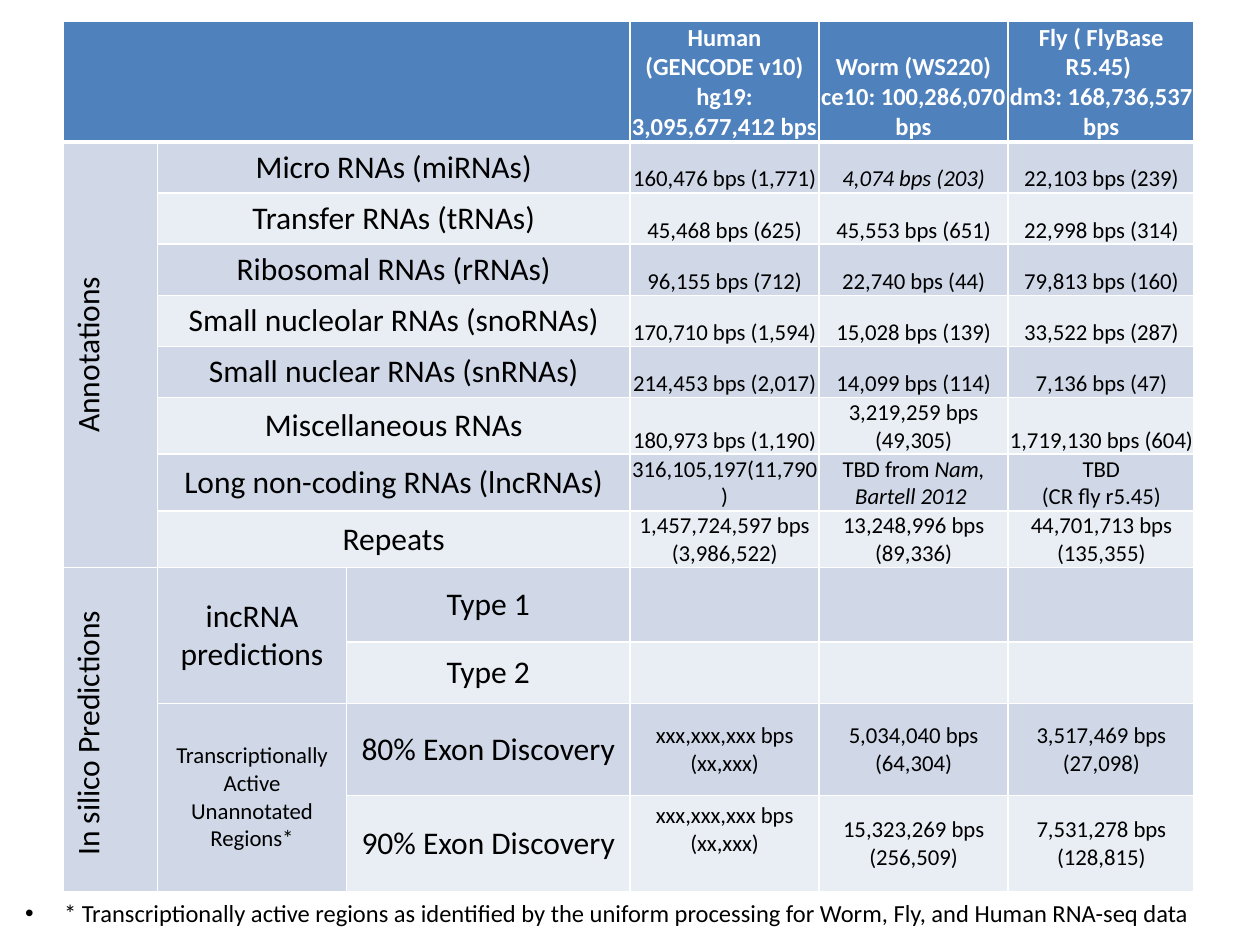
from pptx import Presentation
from pptx.dml.color import RGBColor
from pptx.enum.text import MSO_ANCHOR, PP_ALIGN
from pptx.oxml.ns import qn
from pptx.util import Inches, Pt
from lxml import etree

MIDDLE, BOTTOM = MSO_ANCHOR.MIDDLE, MSO_ANCHOR.BOTTOM
CENTER = PP_ALIGN.CENTER
FONT = "Calibri"
BLUE, DARK, LIGHT = "4F81BD", "D0D8E8", "E9EDF4"
WHITE, BLACK = "FFFFFF", "000000"

COLS = [0.75, 1.5, 2.25, 1.5, 1.5, 1.48]
ROWS = [0.95] + [0.4] * 5 + [0.45] * 3 + [0.59, 0.49, 0.73, 0.75]

HEADS = [
    "Human (GENCODE v10)\nhg19: 3,095,677,412 bps",
    "Worm (WS220)\nce10: 100,286,070 bps",
    "Fly ( FlyBase R5.45) \ndm3: 168,736,537 bps",
]
# Underscores set off italic text
NOTED = [
    ("Micro RNAs (miRNAs)", "160,476 bps (1,771)", "_4,074 bps (203)_", "22,103 bps (239)"),
    ("Transfer RNAs (tRNAs)", "45,468 bps (625)", "45,553 bps (651)", "22,998 bps (314)"),
    ("Ribosomal RNAs (rRNAs)", "96,155 bps (712)", "22,740 bps (44)", "79,813 bps (160)"),
    ("Small nucleolar RNAs (snoRNAs)", "170,710 bps (1,594)", "15,028 bps (139)", "33,522 bps (287)"),
    ("Small nuclear RNAs (snRNAs)", "214,453 bps (2,017)", "14,099 bps (114)", "7,136 bps (47)"),
    ("Miscellaneous RNAs", "180,973 bps (1,190)", "3,219,259 bps (49,305)", "1,719,130 bps (604)"),
    ("Long non-coding RNAs (lncRNAs)", "316,105,197(11,790)",
     "TBD from _Nam, Bartell 2012 _", "TBD\n(CR fly r5.45)"),
    ("Repeats", "1,457,724,597 bps (3,986,522)", "13,248,996 bps (89,336)", "44,701,713 bps (135,355)"),
]
GUESSED = [
    ("Type 1", "", "", ""),
    ("Type 2", "", "", ""),
    ("80% Exon Discovery", "xxx,xxx,xxx bps (xx,xxx)", "5,034,040 bps (64,304)", "3,517,469 bps (27,098)"),
    ("90% Exon Discovery", "xxx,xxx,xxx bps (xx,xxx)", "15,323,269 bps (256,509)", "7,531,278 bps (128,815)"),
]
NOTE = ("* Transcriptionally active regions as identified by the uniform "
        "processing for Worm, Fly, and Human RNA-seq data")


def color(code):
    return RGBColor.from_string(code)


def style(font, size, code=BLACK, bold=False):
    font.name, font.size, font.bold = FONT, Pt(size), bold
    font.color.rgb = color(code)


def write(cell, text, size, code=BLACK, bold=False):
    frame = cell.text_frame
    frame.text = text.replace("_", "")
    for para, line in zip(frame.paragraphs, text.split("\n")):
        para.alignment = CENTER
        if "_" in line:
            para.text = ""
            for i, part in enumerate(line.split("_")):
                if part:
                    run = para.add_run()
                    run.text = part
                    run.font.italic = i % 2 == 1
        for run in para.runs:
            style(run.font, size, code, bold)
    cell.vertical_anchor = MIDDLE


def tighten(cell):
    """Seat the text at the foot of the cell with thin margins."""
    cell.vertical_anchor = BOTTOM
    cell.margin_left = cell.margin_right = cell.margin_top = Inches(0.01)
    cell.margin_bottom = 0


def border(cell, row, col):
    props = cell._tc.get_or_add_tcPr()
    widths = {"a:lnL": 1, "a:lnR": 2.25 if col == len(COLS) - 1 else 1,
              "a:lnT": 1, "a:lnB": 3 if row == 0 else 1}
    for i, (tag, width) in enumerate(widths.items()):
        line = etree.Element(qn(tag), w=str(Pt(width)))
        fill = etree.SubElement(line, qn("a:solidFill"))
        etree.SubElement(fill, qn("a:srgbClr"), val=WHITE)
        props.insert(i, line)


def add_grid(slide, left, top):
    """Place the table with its bands, borders and merged cells."""
    grid = slide.shapes.add_table(
        len(ROWS), len(COLS), left, top,
        Inches(sum(COLS)), Inches(sum(ROWS))).table
    for col, width in zip(grid.columns, COLS):
        col.width = Inches(width)
    for row, height in zip(grid.rows, ROWS):
        row.height = Inches(height)
    for r in range(len(ROWS)):
        for c in range(len(COLS)):
            cell = grid.cell(r, c)
            cell.fill.solid()
            band = BLUE if r == 0 else DARK if r % 2 else LIGHT
            cell.fill.fore_color.rgb = color(band)
            border(cell, r, c)
    fill_heads(grid)
    fill_noted(grid, 1)
    fill_guessed(grid, 1 + len(NOTED))


def fill_heads(grid):
    grid.cell(0, 0).merge(grid.cell(0, 2))
    for c, text in enumerate(HEADS, 3):
        write(grid.cell(0, c), text, 14, WHITE, True)
        tighten(grid.cell(0, c))


def fill_side(grid, first, last, text):
    """Merge the first column over some rows and turn its text upward."""
    cell = grid.cell(first, 0)
    cell.merge(grid.cell(last, 0))
    write(cell, text, 18)
    cell._tc.get_or_add_tcPr().set("vert", "vert270")


def fill_noted(grid, first):
    fill_side(grid, first, first + len(NOTED) - 1, "Annotations")
    for r, (name, *counts) in enumerate(NOTED, first):
        grid.cell(r, 1).merge(grid.cell(r, 2))
        write(grid.cell(r, 1), name, 18)
        for c, text in enumerate(counts, 3):
            write(grid.cell(r, c), text, 13)
            tighten(grid.cell(r, c))


def fill_guessed(grid, first):
    last = first + len(GUESSED) - 1
    fill_side(grid, first, last, "In silico Predictions ")
    groups = [("incRNA predictions", 18),
              ("Transcriptionally\nActive Unannotated Regions*", 13)]
    for i, (name, size) in enumerate(groups):
        top = first + 2 * i
        grid.cell(top, 1).merge(grid.cell(top + 1, 1))
        write(grid.cell(top, 1), name, size)
    for r, (name, *counts) in enumerate(GUESSED, first):
        write(grid.cell(r, 2), name, 18)
        for c, text in enumerate(counts, 3):
            write(grid.cell(r, c), text, 13)
    grid.cell(last, 3).margin_bottom = Inches(0.27)


def add_note(slide, left, top, width, height):
    frame = slide.shapes.add_textbox(left, top, width, height).text_frame
    frame.word_wrap = True
    para = frame.paragraphs[0]
    para.text = NOTE
    props = para._p.get_or_add_pPr()
    props.set("marL", str(Inches(0.31)))
    props.set("indent", str(-Inches(0.31)))
    etree.SubElement(props, qn("a:buFont"), typeface="Arial")
    etree.SubElement(props, qn("a:buChar"), char="•")
    style(para.runs[0].font, 14)


def main():
    deck = Presentation()
    deck.slide_width, deck.slide_height = Inches(10), Inches(7.5)
    slide = deck.slides.add_slide(deck.slide_layouts[6])
    add_grid(slide, Inches(0.5), Inches(0.17))
    add_note(slide, Inches(0.1), Inches(7.08), Inches(9.82), Inches(0.34))
    deck.save("out.pptx")


if __name__ == "__main__":
    main()
